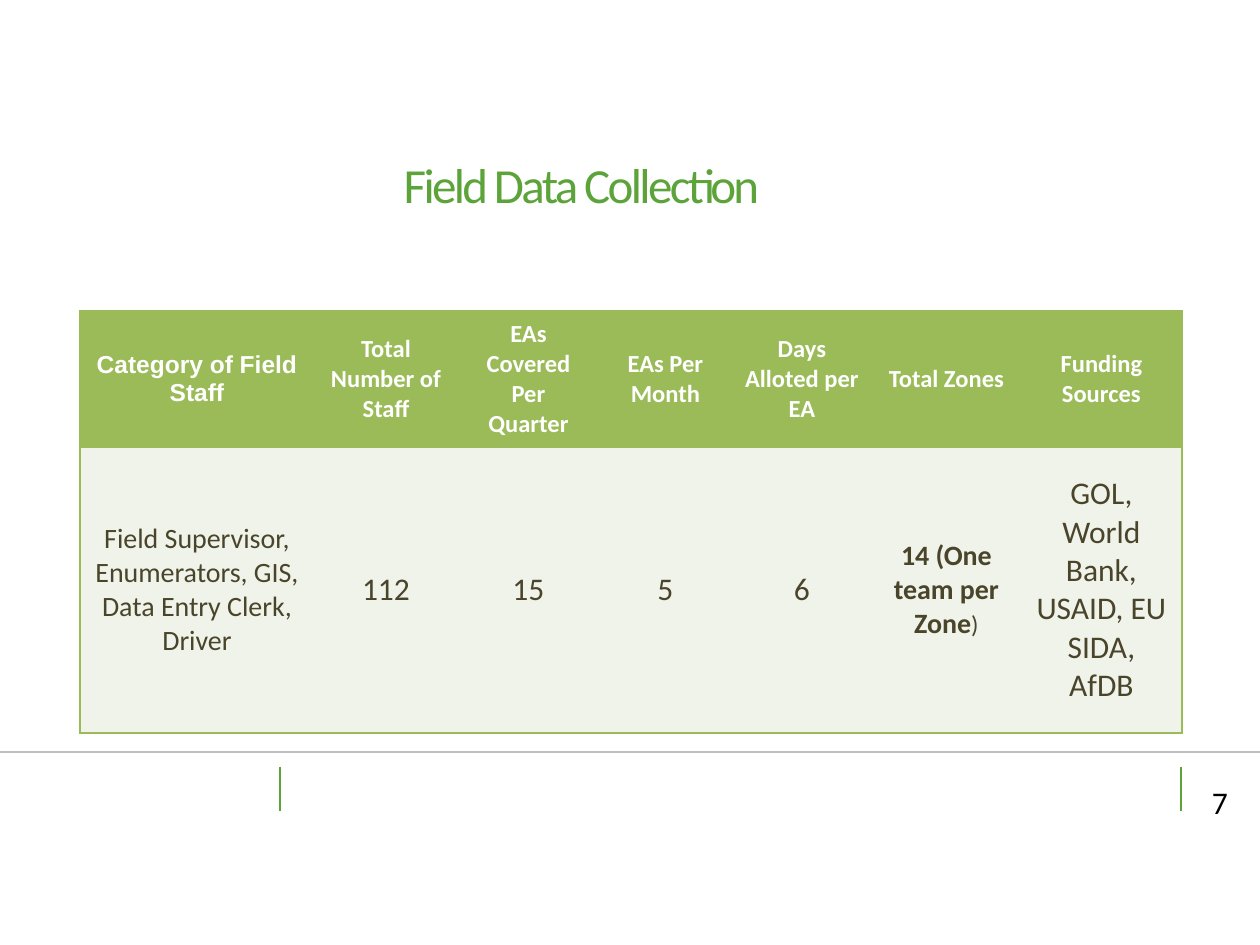
from lxml.etree import SubElement
from pptx import Presentation
from pptx.dml.color import RGBColor
from pptx.enum.shapes import MSO_CONNECTOR
from pptx.enum.text import MSO_ANCHOR, PP_ALIGN
from pptx.oxml import parse_xml
from pptx.oxml.ns import nsdecls, qn
from pptx.util import Emu, Pt

GREEN = "5CA33A"
TABLE_GREEN = "9BBB59"
PALE_GREEN = "EFF3EA"
BROWN = "4A452A"
COLUMN_WIDTHS = [234, 144, 141, 133, 140, 149, 161]
ROW_HEIGHTS = [136, 286]
HEADINGS = [
    "Category of Field Staff", "Total Number of Staff", "EAs Covered Per Quarter",
    "EAs Per Month", "Days Alloted per EA", "Total Zones", "Funding Sources",
]
VALUES = [
    ("Field Supervisor, Enumerators, GIS, Data Entry Clerk, Driver", 16),
    ("112", 18), ("15", 18), ("5", 18), ("6", 18),
    ("14 (One team per Zone", 16),
    ("GOL, World Bank, USAID, EU SIDA, AfDB", 18),
]


def px(count):
    return Emu(round(count * 914400 / 126))


def color(value):
    return RGBColor.from_string(value)


def write(para, text, size, ink, bold=False, name="Calibri"):
    para.alignment = PP_ALIGN.CENTER
    para.font.size = Pt(size)
    para.font.name = name
    para.font.bold = bold
    para.font.color.rgb = color(ink)
    span = para.add_run()
    span.text = text
    return span


def add_text(page, left, top, width, height, text, size, ink):
    box = page.shapes.add_textbox(px(left), px(top), px(width), px(height))
    frame = box.text_frame
    frame.word_wrap = True
    span = write(frame.paragraphs[0], text, size, ink)
    return frame, span


def add_title(page):
    frame, span = add_text(page, 122, 154, 919, 118, "Field Data Collection", 28, GREEN)
    frame.margin_left = frame.margin_right = frame.margin_top = 0
    frame.margin_bottom = px(49)
    frame.vertical_anchor = MSO_ANCHOR.MIDDLE
    frame.paragraphs[0].line_spacing = Pt(28)
    span._r.get_or_add_rPr().set("spc", "-150")


def add_line(page, start_x, start_y, end_x, end_y, ink):
    line = page.shapes.add_connector(
        MSO_CONNECTOR.STRAIGHT, px(start_x), px(start_y), px(end_x), px(end_y))
    line.line.color.rgb = color(ink)
    line.line.width = Pt(1)
    SubElement(line._element.spPr, qn("a:effectLst"))


def set_borders(cell, visible):
    properties = cell._tc.get_or_add_tcPr()
    for index, side in enumerate("LRTB"):
        paint = "<a:noFill/>"
        if side in visible:
            paint = f'<a:solidFill><a:srgbClr val="{TABLE_GREEN}"/></a:solidFill>'
        border = parse_xml(f'<a:ln{side} {nsdecls("a")} w="12700">{paint}</a:ln{side}>')
        properties.insert(index, border)


def style_cell(cell, row, column):
    cell.fill.solid()
    cell.fill.fore_color.rgb = color(PALE_GREEN if row else TABLE_GREEN)
    cell.vertical_anchor = MSO_ANCHOR.MIDDLE
    sides = "TB"
    if column == 0:
        sides += "L"
    if column == len(COLUMN_WIDTHS) - 1:
        sides += "R"
    set_borders(cell, sides)


def add_staff_table(page):
    frame = page.shapes.add_table(
        len(ROW_HEIGHTS), len(COLUMN_WIDTHS), px(80), px(311),
        px(sum(COLUMN_WIDTHS)), px(sum(ROW_HEIGHTS)))
    table = frame.table
    table.horz_banding = False
    for row, height in enumerate(ROW_HEIGHTS):
        table.rows[row].height = px(height)
    for column, width in enumerate(COLUMN_WIDTHS):
        table.columns[column].width = px(width)
        heading, value = table.cell(0, column), table.cell(1, column)
        style_cell(heading, 0, column)
        style_cell(value, 1, column)
        write(heading.text_frame.paragraphs[0], HEADINGS[column], 14, "FFFFFF",
              True, "Calibri" if column else "Arial")
        text, size = VALUES[column]
        write(value.text_frame.paragraphs[0], text, size, BROWN, column == 5)
    closing = table.cell(1, 5).text_frame.paragraphs[0].add_run()
    closing.text = ")"
    closing.font.size = Pt(14)
    closing.font.bold = False


def main():
    deck = Presentation()
    deck.slide_width = px(1260)
    deck.slide_height = px(945)
    page = deck.slides.add_slide(deck.slide_layouts[6])
    add_text(page, 1181, 777, 78, 29, "7", 18, "000000")
    add_line(page, 0, 752, 1260, 752, "BFBFBF")
    for x in (280, 1181):
        add_line(page, x, 767, x, 811, GREEN)
    add_staff_table(page)
    add_title(page)
    deck.save("out.pptx")


if __name__ == "__main__":
    main()
